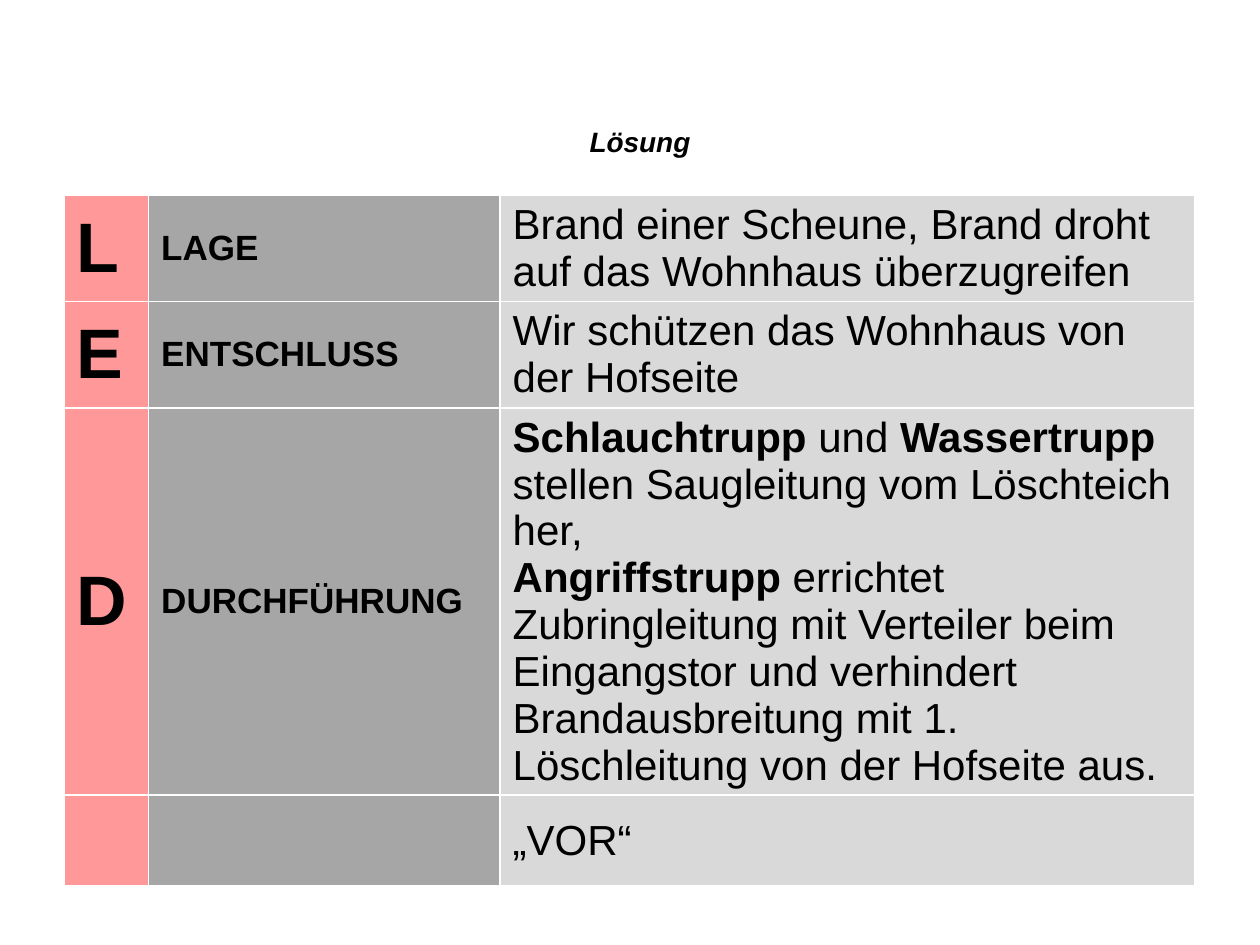
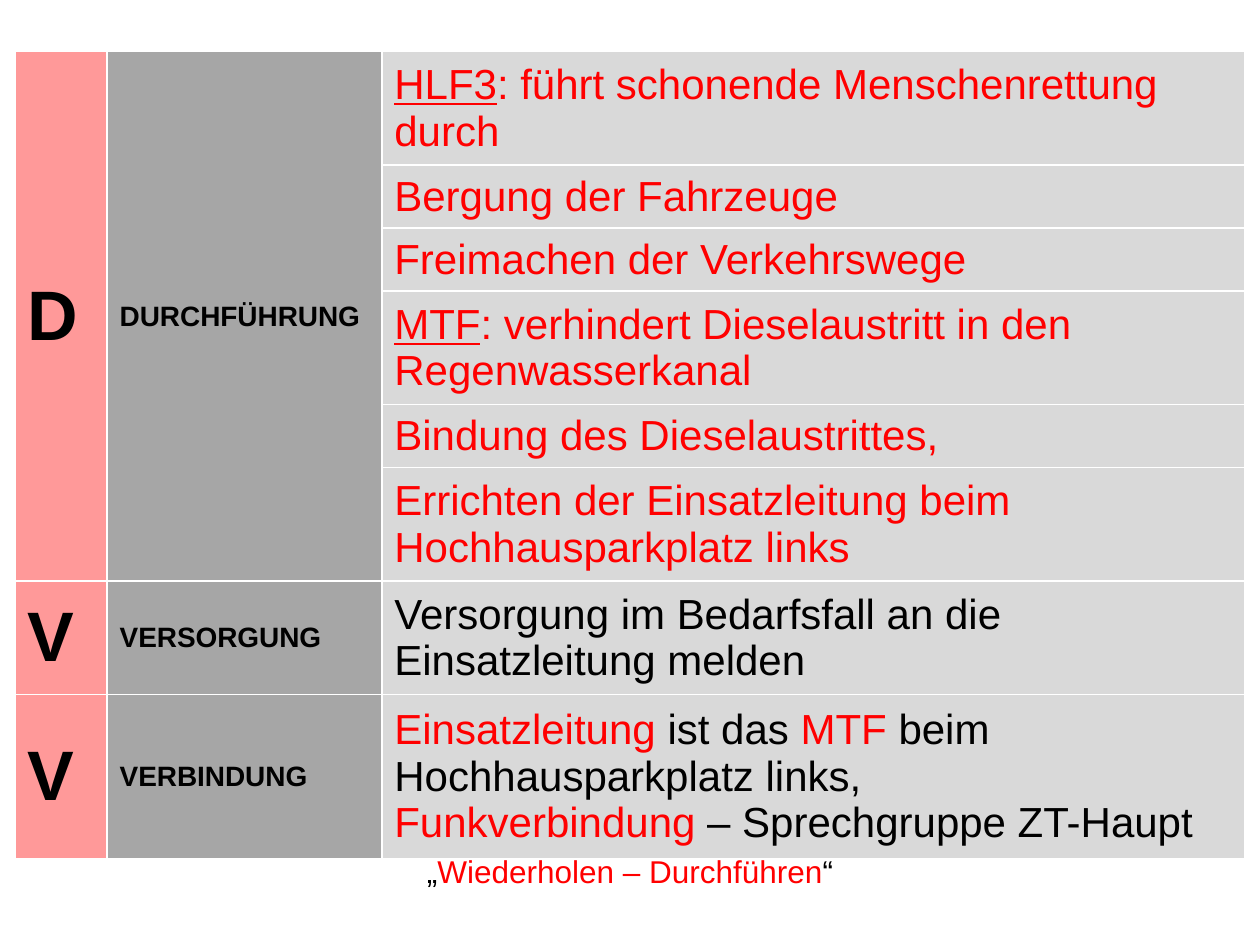
from lxml.etree import SubElement
from pptx import Presentation
from pptx.dml.color import RGBColor
from pptx.enum.shapes import MSO_SHAPE
from pptx.enum.text import MSO_ANCHOR, PP_ALIGN
from pptx.oxml.ns import qn
from pptx.util import Inches, Pt

FONT = "Arial"
BLACK, WHITE, RED = "000000", "FFFFFF", "FF0000"
COLUMN_FILLS = ("FF9999", "A6A6A6", "D9D9D9")
LETTER_SIZE, ORDER_SIZE = 40, 24

SOLUTION_ROWS = [
    (0.84, "L", "LAGE", [[("Brand einer Scheune, Brand droht auf das Wohnhaus überzugreifen", "")]]),
    (0.84, "E", "ENTSCHLUSS", [[("Wir schützen das Wohnhaus von der Hofseite", "")]]),
    (3.07, "D", "DURCHFÜHRUNG", [
        [("Schlauchtrupp", "b"), (" und ", ""), ("Wassertrupp", "b"),
         (" stellen Saugleitung vom Löschteich her,", "")],
        [("Angriffstrupp", "b"),
         (" errichtet Zubringleitung mit Verteiler beim Eingangstor und verhindert "
          "Brandausbreitung mit 1. Löschleitung von der Hofseite aus.", "")]]),
    (0.72, "", "", [[("„VOR“", "")]]),
]

EXECUTION_ROWS = [
    (0.9, "D", "DURCHFÜHRUNG", [[("HLF3", "ru"), (": führt schonende Menschenrettung durch", "r")]]),
    (0.5, "", "", [[("Bergung der Fahrzeuge", "r")]]),
    (0.5, "", "", [[("Freimachen der Verkehrswege", "r")]]),
    (0.9, "", "", [[("MTF", "ru"), (": verhindert Dieselaustritt in den Regenwasserkanal", "r")]]),
    (0.5, "", "", [[("Bindung des Dieselaustrittes,", "r")]]),
    (0.9, "", "", [[("Errichten der Einsatzleitung beim Hochhausparkplatz links", "r")]]),
    (0.9, "V", "VERSORGUNG", [[("Versorgung im Bedarfsfall an die Einsatzleitung melden", "")]]),
    (1.29, "V", "VERBINDUNG", [
        [("Einsatzleitung ", "r"), ("ist das ", ""), ("MTF ", "r"),
         ("beim Hochhausparkplatz links,", "")],
        [("Funkverbindung ", "r"), ("– Sprechgruppe ZT-Haupt", "")]]),
]


def color(hex_code):
    """Turn a hex string into a colour."""
    return RGBColor.from_string(hex_code)


def write(frame, paragraphs, size, align=PP_ALIGN.LEFT):
    """Write paragraphs of (text, marks) runs; marks: b bold, i italic, u underline, r red."""
    for number, parts in enumerate(paragraphs):
        paragraph = frame.add_paragraph() if number else frame.paragraphs[0]
        paragraph.alignment = align
        for text, marks in parts:
            run = paragraph.add_run()
            run.text = text
            font = run.font
            font.name, font.size = FONT, Pt(size)
            font.bold, font.italic, font.underline = (mark in marks for mark in "biu")
            font.color.rgb = color(RED if "r" in marks else BLACK)


def style_cell(cell, fill):
    """Give a cell white borders, a fill and middle anchoring."""
    properties = cell._tc.get_or_add_tcPr()
    for side in ("lnL", "lnR", "lnT", "lnB"):
        border = SubElement(properties, qn(f"a:{side}"), w=str(Pt(1)))
        SubElement(SubElement(border, qn("a:solidFill")), qn("a:srgbClr"), val=WHITE)
    cell.fill.solid()
    cell.fill.fore_color.rgb = color(fill)
    cell.vertical_anchor = MSO_ANCHOR.MIDDLE


def add_order_table(slide, left, top, widths, rows, term_size, merged_rows=1):
    """Add a table of letter, term and order, with the first rows merged on the left."""
    height = sum(row[0] for row in rows)
    table = slide.shapes.add_table(len(rows), len(widths), Inches(left), Inches(top),
                                   Inches(sum(widths)), Inches(height)).table
    table.first_row = table.horz_banding = False
    for column, width in zip(table.columns, widths):
        column.width = Inches(width)
    for r, (row_height, letter, term, order) in enumerate(rows):
        table.rows[r].height = Inches(row_height)
        contents = (([[(letter, "b")]] if letter else [], LETTER_SIZE),
                    ([[(term, "b")]] if term else [], term_size),
                    (order, ORDER_SIZE))
        for c, (paragraphs, size) in enumerate(contents):
            cell = table.cell(r, c)
            style_cell(cell, COLUMN_FILLS[c])
            write(cell.text_frame, paragraphs, size)
    if merged_rows > 1:
        for c in (0, 1):
            table.cell(0, c).merge(table.cell(merged_rows - 1, c))


def add_heading(slide, left, top, width, height):
    """Add the white heading box."""
    heading = slide.shapes.add_shape(MSO_SHAPE.RECTANGLE, Inches(left), Inches(top),
                                     Inches(width), Inches(height))
    heading.shadow.inherit = False
    heading.fill.solid()
    heading.fill.fore_color.rgb = color(WHITE)
    heading.line.fill.background()
    heading.text_frame.vertical_anchor = MSO_ANCHOR.MIDDLE
    write(heading.text_frame, [[("Lösung", "bi")]], 16, PP_ALIGN.CENTER)


def add_closing_command(slide, left, top, width, height):
    """Add the centred command below the table."""
    command = slide.shapes.add_textbox(Inches(left), Inches(top), Inches(width), Inches(height))
    command.text_frame.word_wrap = True
    write(command.text_frame, [[("„", ""), ("Wiederholen – Durchführen", "r"), ("“", "")]],
          18, PP_ALIGN.CENTER)


def build_solution(slide):
    """Build the slide with situation, decision and execution."""
    add_heading(slide, 3.58, 0.92, 3, 0.4)
    add_order_table(slide, 0.51, 1.55, (0.67, 2.79, 5.51), SOLUTION_ROWS, 20)


def build_execution(slide):
    """Build the slide with execution, supply and communication."""
    add_closing_command(slide, 0.12, 6.71, 9.76, 0.5)
    add_order_table(slide, 0.12, 0.41, (0.73, 2.18, 6.85), EXECUTION_ROWS, 16, merged_rows=6)


def main():
    """Build and save the presentation."""
    deck = Presentation()
    deck.slide_width, deck.slide_height = Inches(10), Inches(7.5)
    for build in (build_solution, build_execution):
        build(deck.slides.add_slide(deck.slide_layouts[6]))
    deck.save("out.pptx")


if __name__ == "__main__":
    main()
